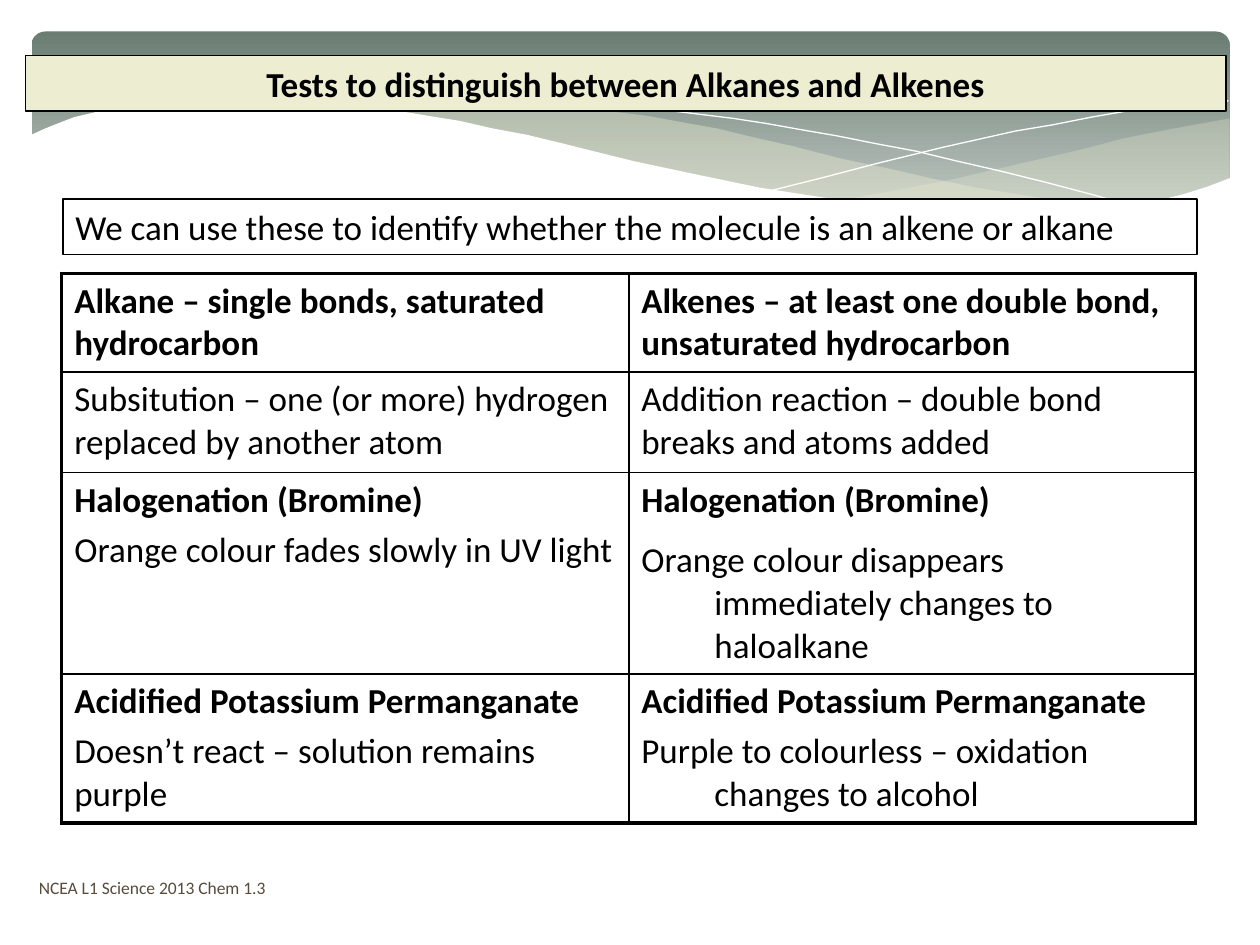
from lxml import etree
from pptx import Presentation, util as u
from pptx.dml.color import RGBColor
from pptx.enum import shapes, text
from pptx.oxml.ns import qn

BLACK = RGBColor(0x00, 0x00, 0x00)
WHITE = RGBColor(0xFF, 0xFF, 0xFF)
CREAM = RGBColor(0xEC, 0xED, 0xD1)
DARK = RGBColor(0x6B, 0x7D, 0x72)
PALE = RGBColor(0xBE, 0xC7, 0xC2)
BROWN = RGBColor(0x56, 0x4B, 0x3C)


def style(para, size=20, bold=False, color=BLACK):
    for run in para.runs:
        run.font.name = "Calibri"
        run.font.size = u.Pt(size)
        run.font.bold = bold
        run.font.color.rgb = color


def wave(points, closed):
    pen = slide.shapes.build_freeform(*points[0], scale=u.Inches(0.01))
    pen.add_line_segments(points[1:], close=closed)
    shape = pen.convert_to_shape()
    shape.shadow.inherit = False
    return shape


deck = Presentation()
deck.slide_width = u.Inches(10)
deck.slide_height = u.Inches(7.5)
slide = deck.slides.add_slide(deck.slide_layouts[5])

band = slide.shapes.add_shape(
    shapes.MSO_SHAPE.ROUNDED_RECTANGLE,
    u.Inches(0.25), u.Inches(0.25), u.Inches(9.51), u.Inches(1.56))
band.adjustments[0] = 0.07
band.shadow.inherit = False
band.line.fill.background()
band.fill.gradient()
band.fill.gradient_angle = 270
for stop, color, pos in zip(band.fill.gradient_stops, (DARK, PALE), (0, 0.9)):
    stop.color.rgb = color
    stop.position = pos

right = [(976, 94), (948, 99), (921, 104), (891, 110), (861, 118), (805, 131),
         (753, 143), (706, 152), (661, 160), (691, 164), (719, 167), (745, 169),
         (769, 171), (803, 172), (835, 172), (863, 170), (889, 166), (913, 162),
         (935, 156), (949, 152), (963, 147), (976, 141)]
middle = [(893, 167), (866, 164), (837, 159), (807, 154), (775, 149), (741, 142),
          (706, 134), (668, 126), (629, 116), (598, 109), (569, 102), (541, 97),
          (514, 92), (489, 89), (465, 86), (442, 83), (420, 82), (399, 80),
          (361, 80), (328, 81), (299, 84), (286, 86), (323, 90), (362, 97),
          (404, 106), (449, 116), (491, 126), (530, 135), (566, 143), (601, 150),
          (634, 156), (665, 161), (695, 165), (722, 168), (748, 170), (773, 172),
          (807, 173), (838, 172), (867, 170)]
for points, share in ((right, 29), (middle, 40)):
    shape = wave(points, True)
    shape.line.fill.background()
    shape.fill.solid()
    shape.fill.fore_color.rgb = CREAM
    tint = shape.fill._xPr.find(qn("a:solidFill"))[0]
    etree.SubElement(tint, qn("a:alpha"), val=str(share * 1000))

fall = [(309, 90), (328, 86), (353, 84), (387, 82), (416, 81), (450, 82),
        (489, 84), (533, 88), (582, 94), (608, 98), (636, 103), (665, 108),
        (695, 114), (727, 120), (760, 128), (795, 136), (831, 145), (869, 155),
        (907, 166)]
rise = [(613, 151), (653, 141), (695, 130), (748, 117), (806, 104), (836, 99),
        (866, 93), (895, 88), (924, 84), (951, 82), (975, 80)]
for points in (fall, rise):
    shape = wave(points, False)
    shape.fill.background()
    shape.line.color.rgb = WHITE
    shape.line.width = u.Pt(0)

cover = [(977, 141), (959, 148), (940, 154), (920, 159), (899, 164), (875, 167),
         (850, 170), (823, 171), (793, 171), (761, 170), (726, 167), (688, 162),
         (648, 156), (603, 149), (555, 139), (503, 128), (447, 114), (418, 107),
         (391, 102), (365, 96), (340, 92), (316, 88), (292, 85), (271, 82),
         (250, 81), (230, 79), (211, 78), (177, 78), (146, 79), (119, 82),
         (95, 85), (76, 89), (59, 93), (46, 98), (36, 102), (25, 107),
         (23, 107), (23, 224), (977, 224)]
shape = wave(cover, True)
shape.line.fill.background()
shape.fill.solid()
shape.fill.fore_color.rgb = WHITE

HALO = "Halogenation (Bromine)"
ACID = "Acidified Potassium Permanganate"
rows = [
    [[("Alkane – single bonds, saturated hydrocarbon", True, 0)],
     [("Alkenes – at least one double bond, unsaturated hydrocarbon", True, 0)]],
    [[("Subsitution – one (or more) hydrogen replaced by another atom", False, 0)],
     [("Addition reaction – double bond breaks and atoms added", False, 0)]],
    [[(HALO, True, 0), ("Orange colour fades slowly in UV light", False, 4)],
     [(HALO, True, 0),
      ("Orange colour disappears immediately changes to haloalkane", False, 10)]],
    [[(ACID, True, 0), ("Doesn’t react – solution remains purple", False, 4)],
     [(ACID, True, 0),
      ("Purple to colourless – oxidation changes to alcohol", False, 4)]],
]
table = slide.shapes.add_table(
    4, 2, u.Inches(0.49), u.Inches(2.17), u.Inches(9), u.Inches(4.35)).table
table.first_row = table.horz_banding = False
for row, high in zip(table.rows, (0.77, 0.8, 1.6, 1.18)):
    row.height = u.Inches(high)
for r, row in enumerate(rows):
    for c, paras in enumerate(row):
        cell = table.cell(r, c)
        frame = cell.text_frame
        frame.text = "\n".join(words for words, bold, gap in paras)
        for para, (words, bold, gap) in zip(frame.paragraphs, paras):
            if gap:
                para.space_before = u.Pt(gap)
            if c == 1 and len(paras) > 1:
                props = para._p.get_or_add_pPr()
                props.set("marL", str(u.Inches(0.58)))
                props.set("indent", str(-u.Inches(0.58)))
            style(para, bold=bold)
        props = cell._tc.get_or_add_tcPr()
        edges = {"lnL": c == 0, "lnR": c == 1, "lnT": r == 0, "lnB": r == 3}
        for name, outer in edges.items():
            width = u.Pt(2.25 if outer else 1)
            edge = etree.SubElement(props, qn("a:" + name), w=str(width))
            paint = etree.SubElement(edge, qn("a:solidFill"))
            etree.SubElement(paint, qn("a:srgbClr"), val=str(BLACK))
        cell.fill.solid()
        cell.fill.fore_color.rgb = WHITE

note = slide.shapes.add_shape(
    shapes.MSO_SHAPE.RECTANGLE,
    u.Inches(0.5), u.Inches(1.58), u.Inches(9), u.Inches(0.44))
note.shadow.inherit = False
note.text_frame.text = "We can use these to identify whether the molecule is an alkene or alkane"

title = slide.shapes.title
title.left, title.top = u.Inches(0.2), u.Inches(0.44)
title.width, title.height = u.Inches(9.53), u.Inches(0.44)
title.text_frame.text = "Tests to distinguish between Alkanes and Alkenes"
slide.shapes._spTree.append(title._element)

left, center = text.PP_ALIGN.LEFT, text.PP_ALIGN.CENTER
for box, color, width, align in ((note, WHITE, 1, left), (title, CREAM, 0.75, center)):
    box.fill.solid()
    box.fill.fore_color.rgb = color
    box.line.color.rgb = BLACK
    box.line.width = u.Pt(width)
    frame = box.text_frame
    frame.word_wrap = True
    frame.auto_size = text.MSO_AUTO_SIZE.NONE
    frame.vertical_anchor = text.MSO_ANCHOR.MIDDLE
    frame.paragraphs[0].alignment = align
    style(frame.paragraphs[0], bold=box is title)

foot = slide.shapes.add_textbox(
    u.Inches(0.21), u.Inches(6.84), u.Inches(4.14), u.Inches(0.4))
frame = foot.text_frame
frame.word_wrap = True
frame.vertical_anchor = text.MSO_ANCHOR.MIDDLE
frame.text = "NCEA L1 Science 2013 Chem 1.3"
style(frame.paragraphs[0], size=10, color=BROWN)

deck.save("out.pptx")
